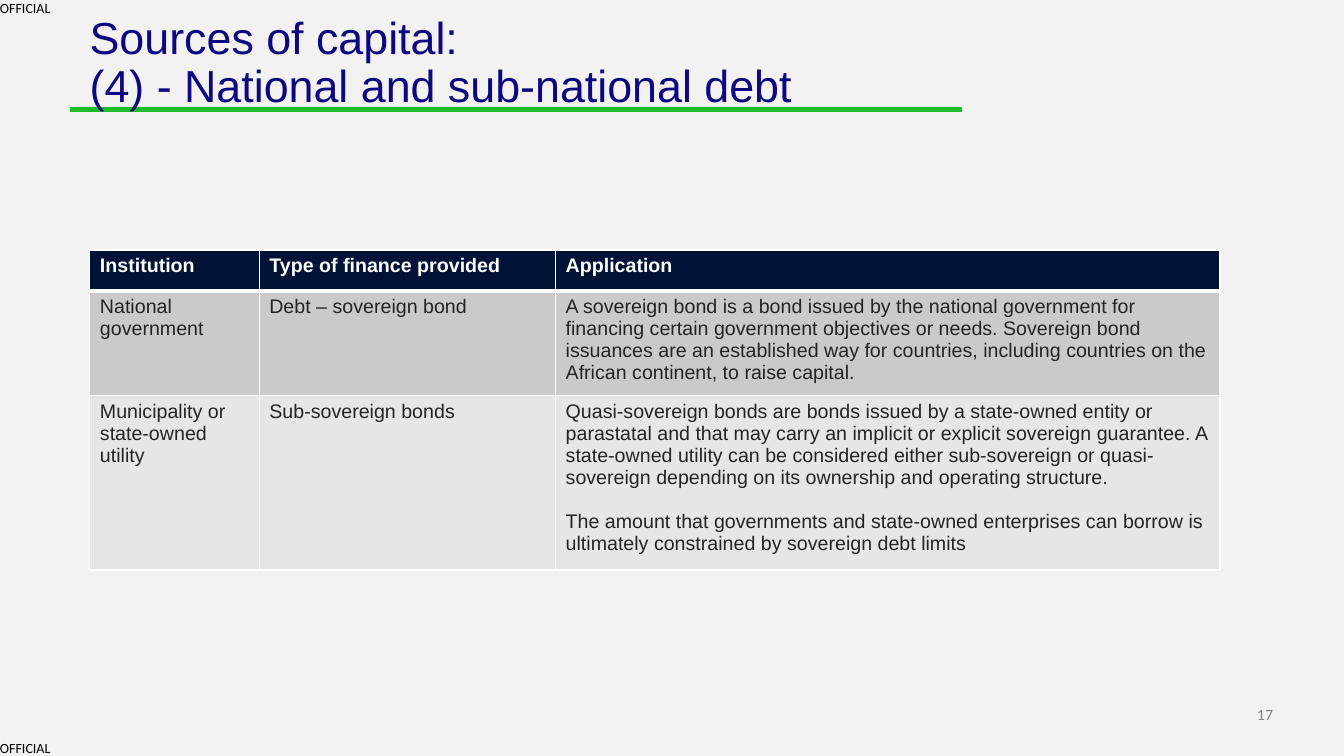
from dataclasses import dataclass

from lxml.etree import SubElement
from pptx import Presentation
from pptx.dml.color import RGBColor
from pptx.enum.text import MSO_ANCHOR as Anchor, MSO_AUTO_SIZE as AutoSize, PP_ALIGN as Align
from pptx.oxml.ns import qn
from pptx.util import Pt


@dataclass(frozen=True)
class Theme:
    background: str = "F2F2F2"
    title: str = "0D0780"
    accent: str = "1CBC2B"
    header: str = "001236"
    bands: tuple = ("CACACC", "E6E6E7")
    border: str = "FFFFFF"
    header_text: str = "FFFFFF"
    body_text: str = "242424"
    number: str = "7F7F7F"
    marking: str = "000000"
    title_size: float = 32
    table_size: float = 14
    small_size: float = 10
    font: str = "Arial"
    marking_font: str = "Calibri"
    number_font: str = "Lato"


THEME = Theme()
COLUMN_WIDTHS = (121, 211.7, 474.5)
ROW_HEIGHTS = (29.2, 74.8, 124.5)
ROWS = (
    (["Institution"], ["Type of finance provided"], ["Application"]),
    (
        ["National government"],
        ["Debt – sovereign bond"],
        ["A sovereign bond is a bond issued by the national government for financing "
         "certain government objectives or needs. Sovereign bond issuances are an "
         "established way for countries, including countries on the African continent, "
         "to raise capital."],
    ),
    (
        ["Municipality or state-owned utility"],
        ["Sub-sovereign bonds"],
        ["Quasi-sovereign bonds are bonds issued by a state-owned entity or parastatal "
         "and that may carry an implicit or explicit sovereign guarantee. A state-owned "
         "utility can be considered either sub-sovereign or quasi-sovereign depending on "
         "its ownership and operating structure.",
         "The amount that governments and state-owned enterprises can borrow is "
         "ultimately constrained by sovereign debt limits"],
    ),
)


def write(frame, paragraphs, *, size, color, font=THEME.font, bold=False,
          align=Align.LEFT, line_spacing=None, gap=0):
    """Fill a text frame; gap is the space between paragraphs."""
    for index, words in enumerate(paragraphs):
        paragraph = frame.add_paragraph() if index else frame.paragraphs[0]
        paragraph.text = words
        paragraph.alignment = align
        paragraph.line_spacing = line_spacing
        paragraph.space_before = Pt(gap if index else 0)
        for run in paragraph.runs:
            run.font.name = font
            run.font.size = Pt(size)
            run.font.bold = bold
            run.font.color.rgb = RGBColor.from_string(color)


def place(shape, left, top, width, height):
    shape.left, shape.top = Pt(left), Pt(top)
    shape.width, shape.height = Pt(width), Pt(height)


def set_frame(frame, *, anchor=Anchor.TOP, wrap=True):
    frame.margin_left = frame.margin_right = frame.margin_top = frame.margin_bottom = 0
    frame.vertical_anchor = anchor
    frame.word_wrap = wrap
    frame.auto_size = AutoSize.NONE


def add_label(slide, words, left, top, width, *, anchor=Anchor.TOP, **text_format):
    label = slide.shapes.add_textbox(Pt(left), Pt(top), Pt(width), Pt(12.2))
    set_frame(label.text_frame, anchor=anchor, wrap=False)
    write(label.text_frame, [words], size=THEME.small_size, **text_format)


def add_rule(slide, left, top, width, height):
    right, bottom = left + width, top + height
    outline = slide.shapes.build_freeform(Pt(left), Pt(top))
    outline.add_line_segments(
        [(Pt(x), Pt(y)) for x, y in ((right, top), (right, bottom), (left, bottom))],
        close=True)
    rule = outline.convert_to_shape()
    rule.shadow.inherit = False
    rule.fill.solid()
    rule.fill.fore_color.rgb = RGBColor.from_string(THEME.accent)
    rule.line.color.rgb = RGBColor.from_string(THEME.accent)
    rule.line.width = Pt(0.75)


def add_title(slide, words):
    title = slide.shapes.title
    place(title, 64, 11.3, 638, 104.4)
    set_frame(title.text_frame)
    write(title.text_frame, [words], size=THEME.title_size, color=THEME.title,
          line_spacing=0.9)
    # Bring the title in front of the rule
    title.element.getparent().append(title.element)


def set_borders(cell, **widths):
    properties = cell._tc.get_or_add_tcPr()
    for side in "LRTB":
        border = SubElement(properties, qn(f"a:ln{side}"), w=str(Pt(widths.get(side, 1))))
        fill = SubElement(border, qn("a:solidFill"))
        SubElement(fill, qn("a:srgbClr"), val=THEME.border)


def add_finance_table(slide, left, top):
    table = slide.shapes.add_table(
        len(ROWS), len(COLUMN_WIDTHS), Pt(left), Pt(top),
        Pt(sum(COLUMN_WIDTHS)), Pt(sum(ROW_HEIGHTS))).table
    for column, width in zip(table.columns, COLUMN_WIDTHS):
        column.width = Pt(width)
    for row, height in zip(table.rows, ROW_HEIGHTS):
        row.height = Pt(height)

    for r, entries in enumerate(ROWS):
        is_header = r == 0
        band = THEME.header if is_header else THEME.bands[(r - 1) % 2]
        for c, paragraphs in enumerate(entries):
            cell = table.cell(r, c)
            set_borders(cell, T=3 if r == 1 else 1, B=3 if is_header else 1)
            cell.fill.solid()
            cell.fill.fore_color.rgb = RGBColor.from_string(band)
            write(cell.text_frame, paragraphs, size=THEME.table_size, bold=is_header,
                  color=THEME.header_text if is_header else THEME.body_text, gap=15.7)


def main():
    deck = Presentation()
    deck.slide_width, deck.slide_height = Pt(960), Pt(540)
    slide = deck.slides.add_slide(deck.slide_layouts[5])
    slide.background.fill.solid()
    slide.background.fill.fore_color.rgb = RGBColor.from_string(THEME.background)

    # Page number and classification markings
    add_label(slide, "17", 879, 504.6, 30.5, anchor=Anchor.BOTTOM, align=Align.RIGHT,
              color=THEME.number, font=THEME.number_font)
    for top in (528.3, 0):
        add_label(slide, "OFFICIAL", 0, top, 38.2,
                  color=THEME.marking, font=THEME.marking_font)

    # Heading
    add_rule(slide, 50.4, 77, 636.5, 2.6)
    add_title(slide, "Sources of capital:\v(4) - National and sub-national debt")

    # Finance sources
    add_finance_table(slide, 64.2, 178.6)

    deck.save("out.pptx")


if __name__ == "__main__":
    main()
